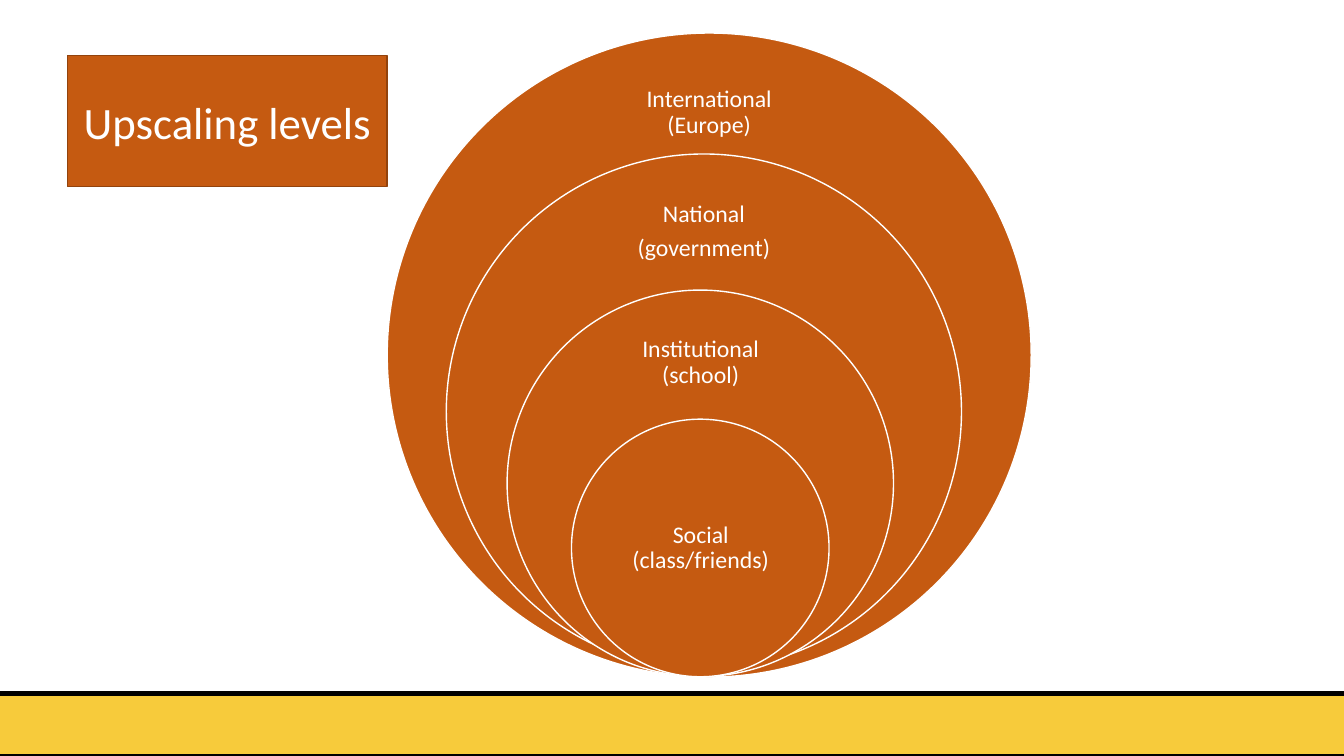
from pptx import Presentation
from pptx import util as u
from pptx.dml.color import RGBColor
from pptx.enum import shapes, text

ORANGE, WHITE = "C55A11", "FFFFFF"

presentation = Presentation()
presentation.slide_width = u.Pt(960)
presentation.slide_height = u.Pt(540)
slide = presentation.slides.add_slide(presentation.slide_layouts[6])


def add_filled(kind, box, fill, line, line_width):
    shape = slide.shapes.add_shape(kind, *map(u.Pt, box))
    shape.shadow.inherit = False
    shape.fill.solid()
    shape.fill.fore_color.rgb = RGBColor.from_string(fill)
    shape.line.color.rgb = RGBColor.from_string(line)
    shape.line.width = u.Pt(line_width)
    return shape


def write(shape, lines, size, inset_x, inset_y, line_spacing=1.0, space_after=0):
    """Fill a shape with centred white paragraphs, one per line."""
    frame = shape.text_frame
    frame.word_wrap = True
    frame.vertical_anchor = text.MSO_ANCHOR.MIDDLE
    frame.margin_left = frame.margin_right = u.Pt(inset_x)
    frame.margin_top = frame.margin_bottom = u.Pt(inset_y)
    for index, line in enumerate(lines):
        paragraph = frame.add_paragraph() if index else frame.paragraphs[0]
        paragraph.alignment = text.PP_ALIGN.CENTER
        paragraph.line_spacing = line_spacing
        paragraph.space_after = u.Pt(space_after)
        run = paragraph.add_run()
        run.text = line
        run.font.name = "Calibri"
        run.font.size = u.Pt(size)
        run.font.color.rgb = RGBColor.from_string(WHITE)


RECTANGLE = shapes.MSO_SHAPE.RECTANGLE
add_filled(RECTANGLE, (-26.6, 495.4, 1013, 44.6), "F7CB3B", "000000", 3)

# Circle left, top, diameter; label left, top, width, height; label lines
levels = [
    ((276.6, 23.6, 460), (442.1, 46.1, 128.9, 69.1), ["International (Europe)"]),
    ((318.8, 110, 368), (438.3, 132.3, 128.9, 66.2), ["National", "(government)"]),
    ((362.2, 207.2, 276), (436, 228.2, 128.9, 61.9), ["Institutional (school)"]),
    ((408.2, 299.4, 184), (435.4, 345.6, 130.3, 92.2), ["Social (class/friends)"]),
]
for (left, top, diameter), label_box, lines in levels:
    add_filled(shapes.MSO_SHAPE.OVAL, (left, top, diameter, diameter), ORANGE, WHITE, 1)
    label = slide.shapes.add_textbox(*map(u.Pt, label_box))
    write(label, lines, 17, 9.4, 9.4, line_spacing=0.9, space_after=6)

title = add_filled(RECTANGLE, (48.2, 39.6, 228.4, 93.8), ORANGE, "92430D", 1)
write(title, ["Upscaling levels"], 32, 7.2, 3.6)

presentation.save("out.pptx")
